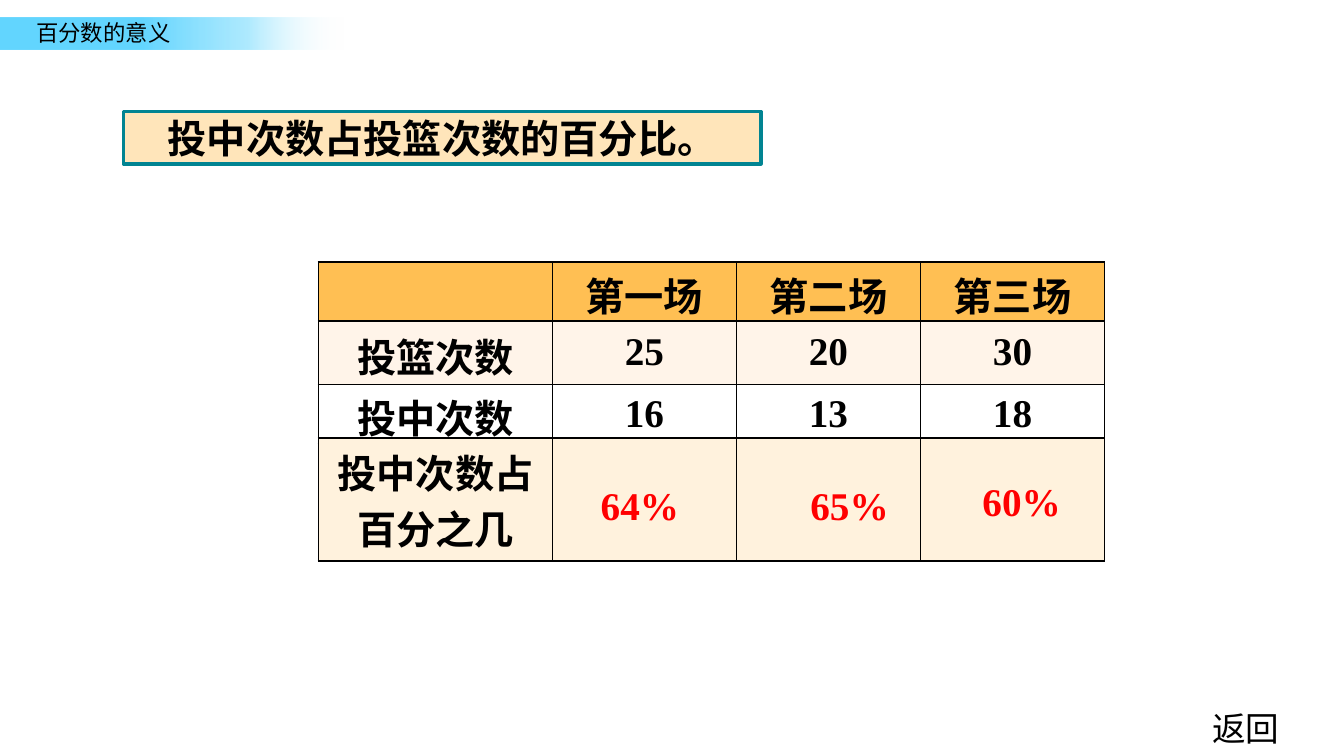
from dataclasses import dataclass
from typing import Optional

from lxml.etree import SubElement as Sub
from pptx import Presentation as Deck
from pptx.dml.color import RGBColor as Rgb
from pptx.enum.shapes import MSO_SHAPE as Kind
from pptx.enum.text import MSO_ANCHOR as Anchor, PP_ALIGN as Align
from pptx.oxml.ns import qn
from pptx.util import Inches, Pt


@dataclass(frozen=True)
class Theme:
    han: str = "Noto Sans CJK SC"
    roman: str = "Times New Roman"
    black: str = "000000"
    red: str = "FF0000"
    teal: str = "018492"
    cream: str = "FFE5BA"
    head: str = "FFBF53"
    tries: str = "FFF4E9"
    hits: str = "FFFFFF"
    rate: str = "FFF2DD"
    small: float = 12
    mid: float = 18
    big: float = 21


@dataclass(frozen=True)
class Label:
    text: str
    box: tuple[float, float, float, float]
    size: float
    font: str
    color: str
    bold: bool = False
    wrap: bool = True
    pad: tuple[float, float] = (0.07, 0.04)


@dataclass(frozen=True)
class Row:
    height: float
    fill: str
    cells: tuple[str, ...]
    lead: float = 24
    top: float = 0.11
    base: float = -0.02


T = Theme()
COLS = (1.74, 1.37, 1.37, 1.37)
LEFT = 2.37


def write(para, text: str, size: float, font: str, color: str, bold: bool) -> None:
    run = para.add_run()
    run.text = text
    run.font.size = Pt(size)
    run.font.bold = bold
    run.font.name = font
    run.font.color.rgb = Rgb.from_string(color)
    Sub(run._r.get_or_add_rPr(), qn("a:ea")).set("typeface", T.han)


def inset(frame, side: float, top: float, base: float) -> None:
    frame.margin_left = frame.margin_right = Inches(side)
    frame.margin_top, frame.margin_bottom = Inches(top), Inches(base)


def draw_label(slide, label: Label) -> None:
    frame = slide.shapes.add_textbox(*map(Inches, label.box)).text_frame
    frame.word_wrap = label.wrap
    side, edge = label.pad
    inset(frame, side, edge, edge)
    write(frame.paragraphs[0], label.text, label.size, label.font, label.color, label.bold)


def border(cell) -> None:
    props = cell._tc.get_or_add_tcPr()
    for spot, side in enumerate(("lnL", "lnR", "lnT", "lnB")):
        line = props.makeelement(qn(f"a:{side}"), {"w": str(Pt(1))})
        props.insert(spot, line)
        Sub(Sub(line, qn("a:solidFill")), qn("a:srgbClr")).set("val", T.black)


def draw_cell(cell, text: str, row: Row) -> None:
    cell.fill.solid()
    cell.fill.fore_color.rgb = Rgb.from_string(row.fill)
    cell.vertical_anchor = Anchor.MIDDLE
    inset(cell, 0.07, 0.04, 0.04)
    border(cell)
    if not text:
        return
    para = cell.text_frame.paragraphs[0]
    para.alignment = Align.CENTER
    font = T.roman if text.isdigit() else T.han
    if font == T.han:
        para.line_spacing = Pt(row.lead)
        inset(cell, 0.07, row.top, row.base)
    write(para, text, T.big, font, T.black, True)


def draw_table(slide, top: float, rows: tuple[Row, ...]) -> None:
    size = (sum(COLS), sum(row.height for row in rows))
    grid = slide.shapes.add_table(
        len(rows), len(COLS), *map(Inches, (LEFT, top, *size))
    ).table
    for col, width in zip(grid.columns, COLS):
        col.width = Inches(width)
    for line, row in zip(grid.rows, rows):
        line.height = Inches(row.height)
        for cell, text in zip(line.cells, row.cells):
            draw_cell(cell, text, row)


def draw_box(slide, box: tuple[float, float, float, float], line: Optional[str] = None):
    shape = slide.shapes.add_shape(Kind.RECTANGLE, *map(Inches, box))
    shape.shadow.inherit = False
    if line:
        shape.line.color.rgb = Rgb.from_string(line)
        shape.line.width = Pt(2)
    else:
        shape.line.fill.background()
    return shape


def draw_band(slide) -> None:
    band = draw_box(slide, (0, 0.13, 2.64, 0.24))
    band.fill.gradient()
    band.fill.gradient_angle = 0
    stops = band._element.spPr.find(qn("a:gradFill")).find(qn("a:gsLst"))
    stops.clear()
    for spot, color, alpha in ((40, "63D6FF", 100), (70, "96E4FF", 76), (97, "FFFFFF", 0)):
        stop = Sub(stops, qn("a:gs"), pos=str(spot * 1000))
        tint = Sub(stop, qn("a:srgbClr"), val=color)
        Sub(tint, qn("a:alpha"), val=str(alpha * 1000))


def draw_title(slide) -> None:
    shape = draw_box(slide, (0.92, 0.83, 4.74, 0.39), T.teal)
    shape.fill.solid()
    shape.fill.fore_color.rgb = Rgb.from_string(T.cream)
    frame = shape.text_frame
    frame.vertical_anchor = Anchor.MIDDLE
    inset(frame, 0.07, 0.04, 0.04)
    para = frame.paragraphs[0]
    para.alignment = Align.CENTER
    write(para, "投中次数占投篮次数的百分比。", T.big, T.roman, T.black, True)


def main() -> None:
    deck = Deck()
    deck.slide_width = Inches(10)
    deck.slide_height = deck.slide_width * 9 // 16
    slide = deck.slides.add_slide(deck.slide_layouts[6])
    draw_band(slide)
    draw_label(slide, Label("百分数的意义", (0.2, 0.1, 1.73, 0.28), T.small, T.han, T.black))
    draw_label(slide, Label("返回", (8.92, 5.22, 0.71, 0.4), T.mid, T.han, T.black,
                            wrap=False, pad=(0.1, 0.05)))
    draw_table(slide, 1.95, (
        Row(0.44, T.head, ("", "第一场", "第二场", "第三场")),
        Row(0.47, T.tries, ("投篮次数", "25", "20", "30")),
        Row(0.44, T.hits, ("投中次数", "16", "13", "18")),
    ))
    draw_table(slide, 3.26, (
        Row(0.91, T.rate, ("投中次数占百分之几", "", "", ""), 30, 0.04, 0.04),
    ))
    draw_title(slide)
    for text, left, top, width in (
        ("64%", 4.4, 3.54, 0.76), ("65%", 5.96, 3.54, 0.98), ("60%", 7.24, 3.51, 1),
    ):
        draw_label(slide, Label(text, (left, top, width, 0.43), T.big, T.roman, T.red, True))
    deck.save("out.pptx")


if __name__ == "__main__":
    main()
